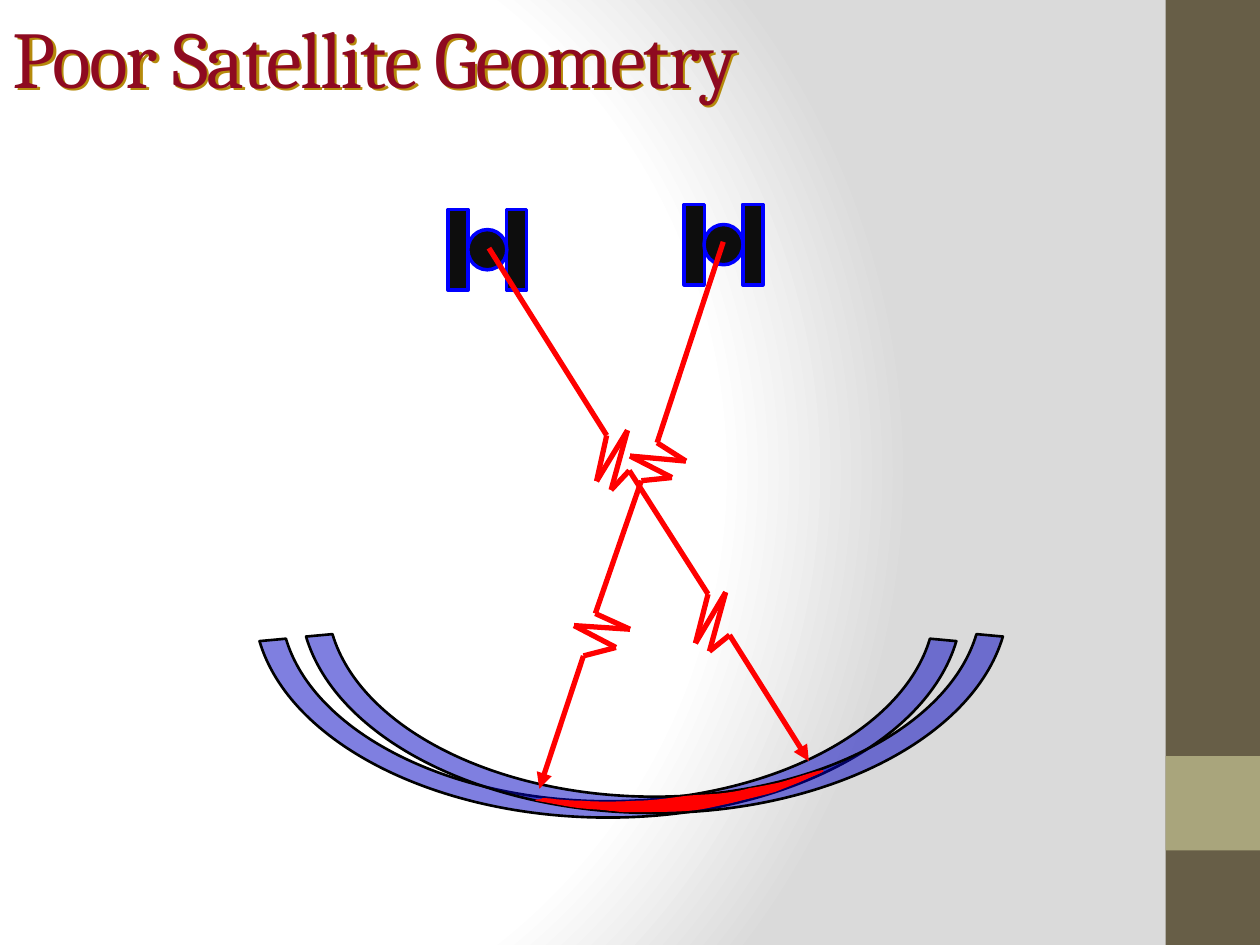
import itertools

import pptx
import pptx.dml.color
import pptx.enum.shapes
import pptx.enum.text
import pptx.oxml
import pptx.oxml.ns
import pptx.util

Pt = pptx.util.Pt
qn = pptx.oxml.ns.qn
SHAPE = pptx.enum.shapes.MSO_SHAPE

COLORS = {
    "white": "FFFFFF",
    "backdrop": "DADADA",
    "sidebar": "675E47",
    "sidebar_accent": "A9A57C",
    "satellite": "0D0D0D",
    "satellite_edge": "0000FF",
    "range_band": "0000C2",
    "band_edge": "000000",
    "signal": "FF0000",
    "title": "8E0A20",
    "title_shadow": "B58A0C",
}

INNER_ARC = [(-184, 0), (-168.1, 53.5), (-90.4, 92.9), (0, 92.9)]
OUTER_ARC = [(-199.1, 1.4), (-181.8, 59.8), (-97.6, 102.2), (0, 102.2)]

UNCERTAIN_AREA = [
    (309.6, 456.5),
    (312.5, 456.5), (314.6, 456.5), (318.2, 457.2),
    (321.8, 457.2), (324, 457.9), (331.9, 457.9),
    (339.1, 458.6), (354.2, 458.6), (364.3, 457.9),
    (374.4, 457.9), (385.9, 455.8), (393.8, 455),
    (402.5, 454.3), (407.5, 454.3), (413.3, 453.6),
    (419, 452.9), (423.4, 452.2), (428.4, 450.7),
    (433.4, 450), (437, 449.3), (444.2, 447.8),
    (450.7, 446.4), (466.6, 440.6), (469.4, 440.6),
    (472.3, 439.9), (467.3, 442.1), (462.2, 444.2),
    (457.9, 446.4), (450, 449.3), (442.8, 452.2),
    (435.6, 454.3), (425.5, 456.5), (417.6, 458.6),
    (409.7, 460.1), (403.2, 462.2), (393.1, 463),
    (383.8, 463.7), (365.8, 463.7), (358.6, 463.7),
    (351.4, 463.7), (352.8, 463), (348.5, 463),
    (344.2, 462.2), (338.4, 462.2), (331.9, 461.5),
    (324.7, 460.8), (315.4, 458.6), (306, 457.2),
]

RIGHT_SIGNAL = [
    (413.3, 138.2), (375.5, 253), (392, 263.5), (360, 260.6),
    (384, 272.9), (366.5, 274.7), (340.2, 350.6), (360, 359.6),
    (328, 357.5), (352, 370), (333.4, 374.8), (308.2, 450.7),
]

LEFT_SIGNAL = [
    (279.4, 141.8), (346.7, 248.8), (340.9, 275), (358.6, 245.9),
    (349.2, 280), (359.6, 268.9), (404.6, 339.5), (397.4, 367.6),
    (414.7, 338.4), (405.4, 372.2), (416.9, 362.9), (462.2, 434.9),
]


def rgb(name):
    return pptx.dml.color.RGBColor.from_string(COLORS[name])


def drawing_xml(tag, attributes="", content=""):
    namespace = pptx.oxml.ns.nsdecls("a")
    return pptx.oxml.parse_xml(f"<a:{tag} {namespace} {attributes}>{content}</a:{tag}>")


def set_background(slide):
    slide.background.fill.solid()
    properties = slide.element.find(".//" + qn("p:bgPr"))
    stops = "".join(
        f'<a:gs pos="{position * 1000}"><a:srgbClr val="{COLORS[name]}"/></a:gs>'
        for position, name in [(0, "white"), (75, "white"), (100, "backdrop")]
    )
    gradient = drawing_xml(
        "gradFill", 'rotWithShape="1"',
        f'<a:gsLst>{stops}</a:gsLst><a:path path="circle">'
        '<a:fillToRect l="20000" t="50000" r="100000" b="50000"/></a:path>',
    )
    properties.replace(properties[0], gradient)


def paint(shape, fill, edge=None, width=0):
    shape.shadow.inherit = False
    shape.fill.solid()
    shape.fill.fore_color.rgb = rgb(fill)
    if edge:
        shape.line.color.rgb = rgb(edge)
        shape.line.width = Pt(width)
    else:
        shape.line.fill.background()


def add_block(shapes, preset, left, top, width, height, *style):
    block = shapes.add_shape(preset, Pt(left), Pt(top), Pt(width), Pt(height))
    paint(block, *style)


def add_title(slide, text):
    title = slide.shapes.title
    title.left, title.top, title.width, title.height = Pt(0), Pt(0), Pt(720), Pt(64)
    frame = title.text_frame
    frame.text = text
    frame.vertical_anchor = pptx.enum.text.MSO_ANCHOR.MIDDLE
    paragraph = frame.paragraphs[0]
    paragraph.alignment = pptx.enum.text.PP_ALIGN.LEFT
    paragraph.font.name = "Cambria"
    paragraph.font.size = Pt(46)
    paragraph.font.color.rgb = rgb("title")
    paragraph.runs[0].font._element.set("spc", "-100")
    title._element.spPr.append(drawing_xml(
        "effectLst", "",
        '<a:outerShdw dist="25400" dir="2700000" algn="ctr" rotWithShape="0">'
        f'<a:srgbClr val="{COLORS["title_shadow"]}"/></a:outerShdw>',
    ))


def add_satellite(slide, left, top):
    satellite = slide.shapes.add_group_shape().shapes
    style = ("satellite", "satellite_edge", 2)
    for panel_left in (left, left + 33.5):
        add_block(satellite, SHAPE.RECTANGLE, panel_left, top, 11.5, 46, *style)
    add_block(satellite, SHAPE.OVAL, left + 11.3, top + 11.5, 22.3, 23, *style)


def add_curved_outline(shapes, points, segment_sizes, close, *style):
    start, *rest = [(Pt(x), Pt(y)) for x, y in points]
    builder = shapes.build_freeform(*start, scale=1.0)
    builder.add_line_segments(rest, close=close)
    outline = builder.convert_to_shape()
    paint(outline, *style)
    steps = iter(outline._element.findall(".//" + qn("a:lnTo")))
    for size in segment_sizes:
        segment = list(itertools.islice(steps, size))
        if size == 3:
            curve = drawing_xml("cubicBezTo")
            segment[0].addprevious(curve)
            for step in segment:
                curve.append(step[0])
                step.getparent().remove(step)
    return outline


def reframe(outline, left, top, width, height):
    shift_x, shift_y = outline.left - Pt(left), outline.top - Pt(top)
    for point in outline._element.iter(qn("a:pt")):
        point.set("x", str(int(point.get("x")) + shift_x))
        point.set("y", str(int(point.get("y")) + shift_y))
    outline.left, outline.top = Pt(left), Pt(top)
    outline.width, outline.height = Pt(width), Pt(height)
    geometry = outline._element.find(".//" + qn("a:path"))
    geometry.set("w", str(Pt(width)))
    geometry.set("h", str(Pt(height)))


def full_arc(half):
    return half + [(-x, y) for x, y in reversed(half[:-1])]


def add_range_band(shapes, center, top):
    ring = full_arc(INNER_ARC) + full_arc(OUTER_ARC)[::-1]
    points = [(center + x, top + y) for x, y in ring]
    band = add_curved_outline(
        shapes, points, (3, 3, 1, 3, 3), True, "range_band", "band_edge", 1.5)
    reframe(band, center - 202.3, top - 141.8, 404.6, 244)
    color = band._element.spPr.find(".//" + qn("a:srgbClr"))
    color.append(drawing_xml("alpha", 'val="50000"'))


def add_signal(slide, points):
    signal = slide.shapes.add_group_shape().shapes
    for start, end in itertools.pairwise(points):
        segment = signal.add_connector(
            pptx.enum.shapes.MSO_CONNECTOR.STRAIGHT, *map(Pt, start + end))
        segment.line.color.rgb = rgb("signal")
        segment.line.width = Pt(3)
        segment._element.spPr.append(drawing_xml("effectLst"))
    segment.line._get_or_add_ln().append(drawing_xml("tailEnd", 'type="triangle"'))


def main():
    deck = pptx.Presentation()
    deck.slide_width, deck.slide_height = Pt(720), Pt(540)
    slide = deck.slides.add_slide(deck.slide_layouts[5])
    set_background(slide)
    add_block(slide.shapes, SHAPE.RECTANGLE, 666, 0, 54, 540, "sidebar")
    add_block(slide.shapes, SHAPE.RECTANGLE, 666, 432, 54, 54, "sidebar_accent")
    add_satellite(slide, 256, 119.7)
    add_satellite(slide, 391, 116.8)
    add_title(slide, "Poor Satellite Geometry")
    ranges = slide.shapes.add_group_shape().shapes
    add_range_band(ranges, 347.4, 365)
    add_range_band(ranges, 374, 362.4)
    add_curved_outline(
        ranges, UNCERTAIN_AREA, [3] * 16, False, "signal", "signal", 0.75)
    add_signal(slide, RIGHT_SIGNAL)
    add_signal(slide, LEFT_SIGNAL)
    deck.save("out.pptx")


if __name__ == "__main__":
    main()
